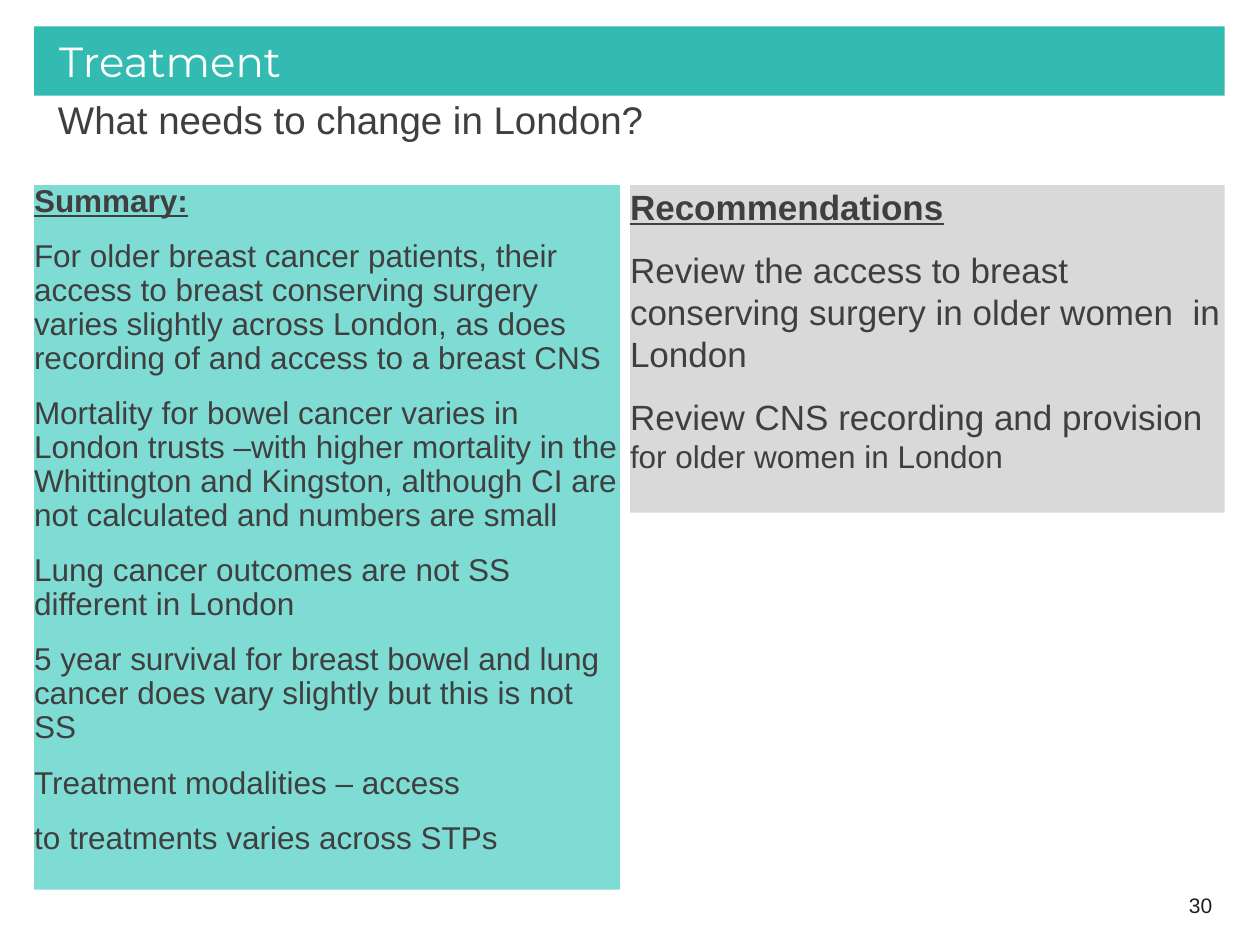
from pptx import Presentation
from pptx.dml.color import RGBColor
from pptx.enum.shapes import MSO_SHAPE as Shape
from pptx.enum.text import MSO_ANCHOR as Anchor, PP_ALIGN as Align
from pptx.util import Inches, Pt

LEFT, WIDTH, PANEL_TOP = 0.27, 9.45, 1.47
SUMMARY = [
    "For older breast cancer patients, their access to breast conserving surgery "
    "varies slightly across London, as does recording of and access to a breast CNS",
    "Mortality for bowel cancer varies in London trusts –with higher mortality in the "
    "Whittington and Kingston, although CI are not calculated and numbers are small",
    "Lung cancer outcomes are not SS different in London",
    "5 year survival for breast bowel and lung cancer does vary slightly but this is not SS",
    "Treatment modalities – access",
    "to treatments varies across STPs",
]
ADVICE = [
    "Review the access to breast conserving surgery in older women  in London",
    "Review CNS recording and provision",
]


def rgb(value):
    return RGBColor.from_string(value)


def write(para, text, size=18, color="3F3F3F", font="Arial", heading=False):
    span = para.add_run()
    span.text = text
    span.font.name = font
    span.font.size = Pt(size)
    span.font.color.rgb = rgb(color)
    span.font.bold = span.font.underline = heading


class SlideBuilder:
    """Draws the bars, labels and text panels of one slide in a shared style."""

    def __init__(self, page):
        self.page = page

    def place(self, box, inset=0, anchor=Anchor.TOP):
        frame = box.text_frame
        frame.word_wrap = True
        frame.vertical_anchor = anchor
        frame.margin_left = Inches(inset)
        frame.margin_right = frame.margin_top = frame.margin_bottom = 0
        return frame

    def block(self, left, top, width, height, fill):
        box = self.page.shapes.add_shape(
            Shape.RECTANGLE, Inches(left), Inches(top), Inches(width), Inches(height))
        box.shadow.inherit = False
        box.fill.solid()
        box.fill.fore_color.rgb = rgb(fill)
        box.line.fill.background()
        return box

    def title(self, text, left, top, width, height, fill):
        box = self.block(left, top, width, height, fill)
        para = self.place(box, 0.2, Anchor.MIDDLE).paragraphs[0]
        para.alignment = Align.LEFT
        write(para, text, size=24, color="FFFFFF", font="Montserrat")

    def label(self, text, left, top, width, height, inset=0,
              anchor=Anchor.TOP, align=Align.LEFT, **style):
        box = self.page.shapes.add_textbox(
            Inches(left), Inches(top), Inches(width), Inches(height))
        frame = self.place(box, inset, anchor)
        frame.margin_right = Inches(0.1) if align == Align.RIGHT else 0
        frame.paragraphs[0].alignment = align
        write(frame.paragraphs[0], text, **style)

    def panel(self, heading, lines, left, width, height, fill, size, spacing=1.0):
        frame = self.place(self.block(left, PANEL_TOP, width, height, fill))
        for index, text in enumerate([heading, *lines]):
            para = frame.add_paragraph() if index else frame.paragraphs[0]
            para.alignment = Align.LEFT
            para.line_spacing = spacing
            para.space_before = para.space_after = Pt(6)
            write(para, text, size=size, heading=index == 0)
        return para


def main():
    deck = Presentation()
    deck.slide_width, deck.slide_height = Inches(10), Inches(7.5)
    builder = SlideBuilder(deck.slides.add_slide(deck.slide_layouts[6]))

    builder.title("Treatment", LEFT, 0.21, WIDTH, 0.55, "33BBB1")
    builder.label("What needs to change in London?", LEFT, 0.76, WIDTH, 0.39,
                  inset=0.19, size=22)
    builder.label("30", 7.39, 6.98, 2.33, 0.4, anchor=Anchor.MIDDLE,
                  align=Align.RIGHT, size=12, color="202020")
    builder.panel("Summary:", SUMMARY, LEFT, 4.65, 5.59, "7FDCD5", 18, spacing=0.9)
    last = builder.panel("Recommendations", ADVICE, 5, 4.72, 2.6, "D9D9D9", 20)
    write(last, " for older women in London")

    deck.save("out.pptx")


if __name__ == "__main__":
    main()
